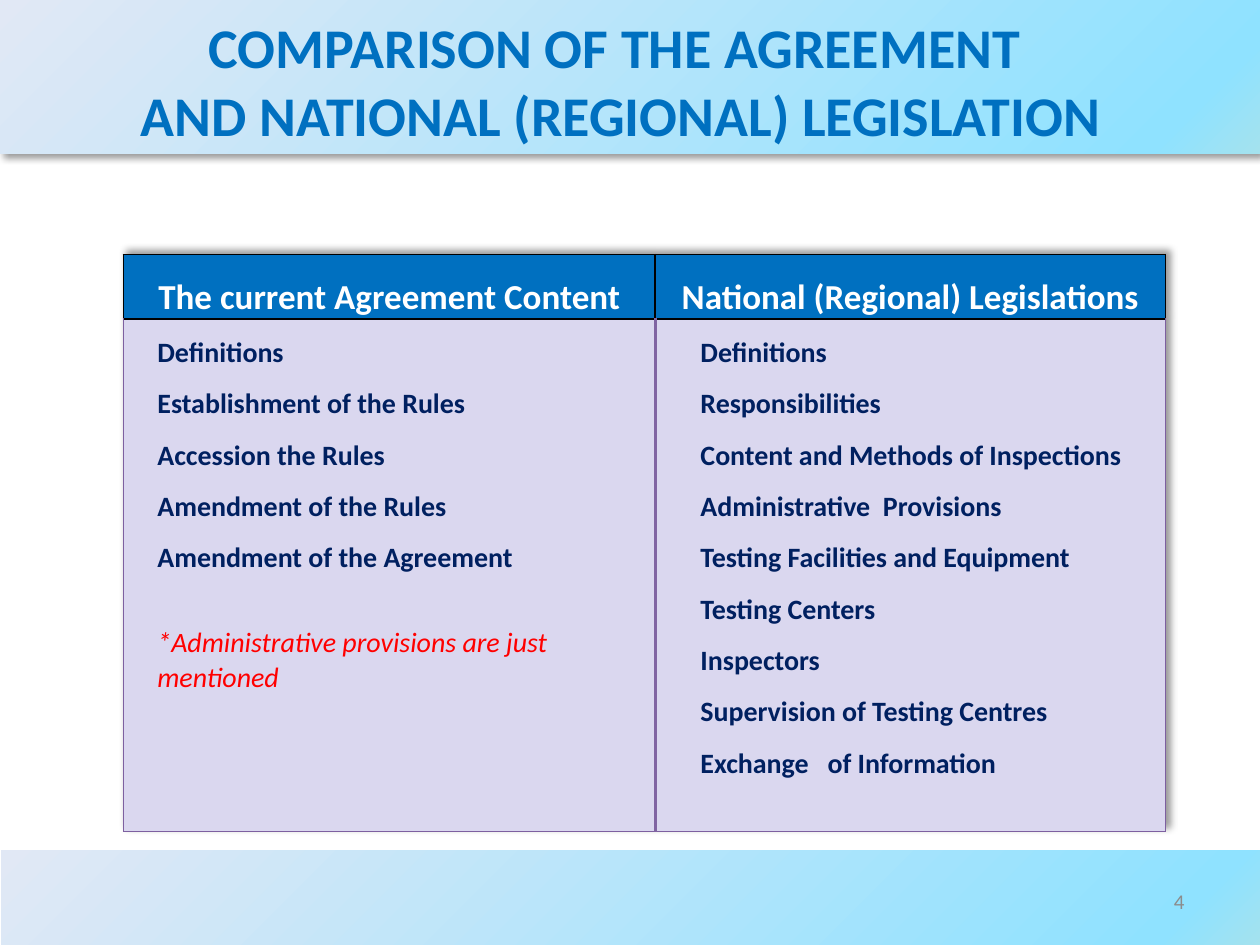
from dataclasses import dataclass

from lxml.etree import SubElement
from pptx import Presentation
from pptx.dml.color import RGBColor
from pptx.enum.shapes import MSO_SHAPE
from pptx.enum.text import MSO_ANCHOR, PP_ALIGN
from pptx.oxml import parse_xml
from pptx.oxml.ns import nsdecls, qn
from pptx.util import Inches, Pt

FONT = "Calibri"
COLORS = {
    "blue": "0070C0",
    "navy": "002060",
    "red": "FF0000",
    "white": "FFFFFF",
    "black": "000000",
    "gray": "8C8C8C",
    "lavender": "DAD7EF",
    "purple": "7D60A0",
    "divider": "8064A2",
}
BAND_STOPS = ((0, "A4E2EE"), (8, "8FE2FF"), (100, "E1E8F5"))


@dataclass(frozen=True)
class Style:
    size: float
    color: str
    bold: bool = False
    italic: bool = False


@dataclass(frozen=True)
class Border:
    color: str
    width: float


@dataclass(frozen=True)
class Column:
    heading: str
    items: tuple[str, ...]
    width: float
    indent: float
    note: str = ""


TITLE = Style(32, "blue", bold=True)
HEADING = Style(20, "white", bold=True)
ITEM = Style(16, "navy", bold=True)
NOTE = Style(16, "red", italic=True)
PAGE_NUMBER = Style(12, "gray")

BLACK_LINE = Border("black", 1)
PURPLE_LINE = Border("purple", 0.75)
DIVIDER_LINE = Border("divider", 2)

COLUMNS = (
    Column(
        "The current Agreement Content",
        ("Definitions", "Establishment of the Rules", "Accession the Rules",
         "Amendment of the Rules", "Amendment of the Agreement"),
        4.22, 0.2, "*Administrative provisions are just mentioned",
    ),
    Column(
        "National (Regional) Legislations",
        ("Definitions", "Responsibilities", "Content and Methods of Inspections",
         "Administrative  Provisions", "Testing Facilities and Equipment",
         "Testing Centers", "Inspectors", "Supervision of Testing Centres",
         "Exchange   of Information"),
        4.05, 0.29,
    ),
)


def add_run(paragraph, text: str, style: Style) -> None:
    run = paragraph.add_run()
    run.text = text
    font = run.font
    font.name, font.size = FONT, Pt(style.size)
    font.bold, font.italic = style.bold, style.italic
    font.color.rgb = RGBColor.from_string(COLORS[style.color])


def add_shadow(properties, direction: int) -> None:
    """Append a soft outer shadow falling at the given angle in degrees."""
    properties.append(parse_xml(
        f'<a:effectLst {nsdecls("a")}><a:outerShdw blurRad="{Pt(4)}" dist="{Pt(3)}" '
        f'dir="{direction * 60000}" algn="tl" rotWithShape="0">'
        f'<a:srgbClr val="{COLORS["black"]}"><a:alpha val="40000"/></a:srgbClr>'
        '</a:outerShdw></a:effectLst>'))


def add_band(slide, left: float, top: float, height: float, shadow: bool = False) -> None:
    """Add a full-width strip with a gradient centred on its lower right corner."""
    band = slide.shapes.add_shape(
        MSO_SHAPE.RECTANGLE, Inches(left), Inches(top), Inches(10), Inches(height))
    band.line.fill.background()
    stops = "".join(
        f'<a:gs pos="{position * 1000}"><a:srgbClr val="{color}"/></a:gs>'
        for position, color in BAND_STOPS)
    properties = band.element.spPr
    properties.find(qn("a:prstGeom")).addnext(parse_xml(
        f'<a:gradFill {nsdecls("a")} rotWithShape="1"><a:gsLst>{stops}</a:gsLst>'
        '<a:path path="circle"><a:fillToRect l="100000" t="100000"/></a:path></a:gradFill>'))
    if shadow:
        add_shadow(properties, 45)
    else:
        band.shadow.inherit = False


def add_text(slide, left: float, top: float, width: float, height: float,
             lines: tuple[str, ...], style: Style, alignment: PP_ALIGN) -> None:
    box = slide.shapes.add_textbox(Inches(left), Inches(top), Inches(width), Inches(height))
    frame = box.text_frame
    frame.word_wrap = True
    frame.vertical_anchor = MSO_ANCHOR.MIDDLE
    paragraph = frame.paragraphs[0]
    paragraph.alignment = alignment
    for index, line in enumerate(lines):
        if index:
            paragraph.add_line_break()
        add_run(paragraph, line, style)


def format_cell(cell, fill: str, left: Border, right: Border, top: Border,
                bottom: Border) -> None:
    cell.margin_left = cell.margin_right = Inches(0.07)
    cell.margin_top = cell.margin_bottom = 0
    properties = cell._tc.get_or_add_tcPr()
    for side, border in (("L", left), ("R", right), ("T", top), ("B", bottom)):
        line = SubElement(properties, qn(f"a:ln{side}"), w=str(Pt(border.width)))
        solid = SubElement(line, qn("a:solidFill"))
        SubElement(solid, qn("a:srgbClr"), val=COLORS[border.color])
    cell.fill.solid()
    cell.fill.fore_color.rgb = RGBColor.from_string(COLORS[fill])


def fill_heading(cell, column: Column) -> None:
    format_cell(cell, "blue", BLACK_LINE, BLACK_LINE, BLACK_LINE, BLACK_LINE)
    paragraph = cell.text_frame.paragraphs[0]
    paragraph.alignment = PP_ALIGN.CENTER
    paragraph.line_spacing = 1.5
    add_run(paragraph, column.heading, HEADING)


def fill_body(cell, column: Column, left: Border, right: Border) -> None:
    format_cell(cell, "lavender", left, right, BLACK_LINE, PURPLE_LINE)
    frame = cell.text_frame
    indent = str(Inches(column.indent))
    for index, item in enumerate(column.items):
        paragraph = frame.add_paragraph() if index else frame.paragraphs[0]
        paragraph.line_spacing = 1.5
        paragraph._p.get_or_add_pPr().set("marL", indent)
        add_run(paragraph, item, ITEM)
    if column.note:
        paragraph = frame.add_paragraph()
        paragraph.space_before = Pt(29)
        paragraph._p.get_or_add_pPr().set("marL", indent)
        add_run(paragraph, column.note, NOTE)


def add_comparison_table(slide) -> None:
    table = slide.shapes.add_table(
        2, len(COLUMNS), Inches(0.98), Inches(2.02), Inches(8.27), Inches(4.58)).table
    table.horz_banding = False
    table.rows[0].height, table.rows[1].height = Inches(0.51), Inches(4.07)
    add_shadow(table._tbl.tblPr, 315)
    table_properties = table._tbl.tblPr
    table_properties.insert(0, table_properties[-1])
    last = len(COLUMNS) - 1
    for index, column in enumerate(COLUMNS):
        table.columns[index].width = Inches(column.width)
        fill_heading(table.cell(0, index), column)
        fill_body(table.cell(1, index), column,
                  DIVIDER_LINE if index else PURPLE_LINE,
                  DIVIDER_LINE if index < last else PURPLE_LINE)


def main() -> None:
    presentation = Presentation()
    presentation.slide_width, presentation.slide_height = Inches(10), Inches(7.5)
    slide = presentation.slides.add_slide(presentation.slide_layouts[6])
    add_band(slide, 0, 0, 1.22, shadow=True)
    add_text(slide, 0.43, 0.01, 9, 1.25,
             ("COMPARISON OF THE AGREEMENT ", "AND NATIONAL (REGIONAL) LEGISLATION"),
             TITLE, PP_ALIGN.CENTER)
    add_comparison_table(slide)
    add_band(slide, 0.01, 6.75, 0.76)
    add_text(slide, 7.17, 6.95, 2.33, 0.4, ("4",), PAGE_NUMBER, PP_ALIGN.RIGHT)
    presentation.save("out.pptx")


if __name__ == "__main__":
    main()
